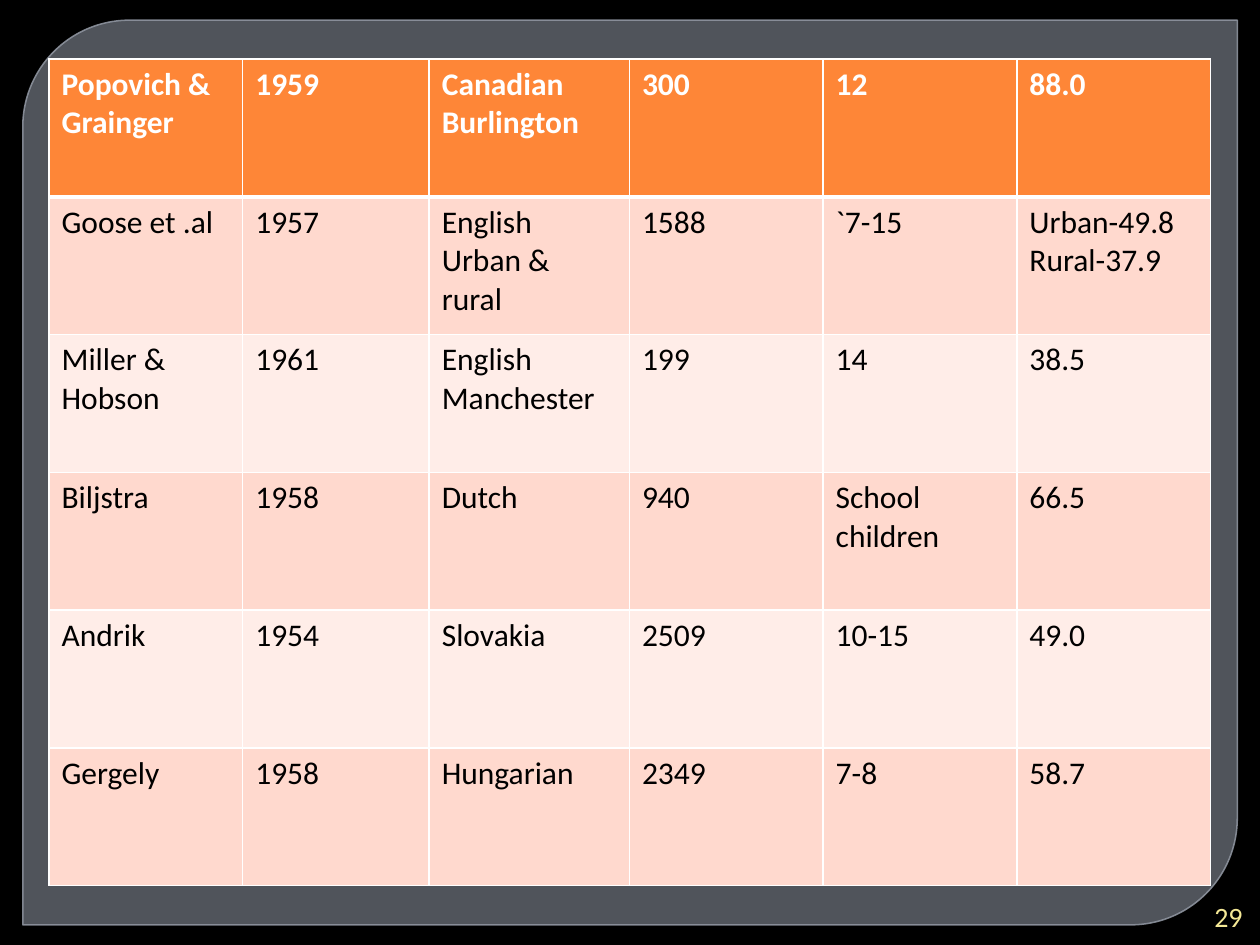
from lxml.etree import SubElement
from pptx import Presentation
from pptx.dml.color import RGBColor
from pptx.enum.shapes import MSO_SHAPE
from pptx.enum.text import MSO_ANCHOR, PP_ALIGN
from pptx.oxml import parse_xml
from pptx.oxml.ns import nsdecls, qn
from pptx.util import Pt

COLORS = {
    "background": "000000",
    "panel": "7C828D",
    "panel_line": "9096A1",
    "header": "FE8637",
    "band_dark": "FFD9CE",
    "band_light": "FFEDE8",
    "border": "FFFFFF",
    "header_text": "FFFFFF",
    "body_text": "000000",
    "number": "F4E896",
}
FONT = "Calibri"
COLUMN_WIDTHS = [110.7, 106.6, 114.4, 110.7, 110.7, 110.7]
STUDIES = [
    ["Popovich & Grainger", "1959", "Canadian Burlington", "300", "12", "88.0"],
    ["Goose et .al", "1957", "English Urban & rural", "1588", "`7-15", "Urban-49.8\nRural-37.9"],
    ["Miller & Hobson", "1961", "English Manchester", "199", "14", "38.5"],
    ["Biljstra", "1958", "Dutch", "940", "School children", "66.5"],
    ["Andrik", "1954", "Slovakia", "2509", "10-15", "49.0"],
    ["Gergely", "1958", "Hungarian", "2349", "7-8", "58.7"],
]


def color(name):
    return RGBColor.from_string(COLORS[name])


def format_text(text_frame, size, color_name, bold=False, alignment=PP_ALIGN.LEFT):
    for paragraph in text_frame.paragraphs:
        paragraph.alignment = alignment
        paragraph.font.name = FONT
        paragraph.font.size = Pt(size)
        paragraph.font.bold = bold
        paragraph.font.color.rgb = color(color_name)


def set_opacity(color_format_fill, percent):
    rgb = color_format_fill.find(".//" + qn("a:srgbClr"))
    SubElement(rgb, qn("a:alpha")).set("val", str(percent * 1000))


def set_borders(cell, widths):
    properties = cell._tc.get_or_add_tcPr()
    for index, (side, width) in enumerate(widths.items()):
        properties.insert(index, parse_xml(
            f'<a:ln{side} {nsdecls("a")} w="{Pt(width)}"><a:solidFill>'
            f'<a:srgbClr val="{COLORS["border"]}"/></a:solidFill></a:ln{side}>'))


def add_panel(slide, left, top, width, height):
    panel = slide.shapes.add_shape(
        MSO_SHAPE.ROUND_2_DIAG_RECTANGLE, Pt(left), Pt(top), Pt(width), Pt(height))
    panel.adjustments[0] = 0.118
    panel.adjustments[1] = 0
    panel.shadow.inherit = False
    panel.fill.solid()
    panel.fill.fore_color.rgb = color("panel")
    panel.line.color.rgb = color("panel_line")
    panel.line.width = Pt(0.87)
    set_opacity(panel._element.spPr.find(qn("a:solidFill")), 65)
    set_opacity(panel.line._ln, 88)


def add_study_table(slide, left, top, width, height):
    table = slide.shapes.add_table(
        len(STUDIES), len(COLUMN_WIDTHS), Pt(left), Pt(top), Pt(width), Pt(height)).table
    for column, share in zip(table.columns, COLUMN_WIDTHS):
        column.width = Pt(width * share / sum(COLUMN_WIDTHS))
    for row_index, study in enumerate(STUDIES):
        table.rows[row_index].height = Pt(height / len(STUDIES))
        is_header = row_index == 0
        band = "header" if is_header else "band_dark" if row_index % 2 else "band_light"
        for column_index, text in enumerate(study):
            cell = table.cell(row_index, column_index)
            cell.text = text
            format_text(cell.text_frame, 18,
                        "header_text" if is_header else "body_text", is_header)
            cell.fill.solid()
            cell.fill.fore_color.rgb = color(band)
            set_borders(cell, {"L": 1, "R": 1, "T": 3 if row_index == 1 else 1,
                               "B": 3 if is_header else 1})


def add_slide_number(slide, left, top, width, height):
    box = slide.shapes.add_textbox(Pt(left), Pt(top), Pt(width), Pt(height))
    box.text_frame.word_wrap = True
    box.text_frame.vertical_anchor = MSO_ANCHOR.MIDDLE
    box.text_frame.text = "29"
    format_text(box.text_frame, 16, "number", alignment=PP_ALIGN.RIGHT)


def main():
    presentation = Presentation()
    presentation.slide_width = Pt(720)
    presentation.slide_height = Pt(540)
    slide = presentation.slides.add_slide(presentation.slide_layouts[6])
    slide.background.fill.solid()
    slide.background.fill.fore_color.rgb = color("background")
    add_panel(slide, 13, 11.5, 694, 517)
    add_study_table(slide, 28, 33.8, 663.8, 472.4)
    add_slide_number(slide, 680.4, 512.6, 36.7, 21.6)
    presentation.save("out.pptx")


if __name__ == "__main__":
    main()
